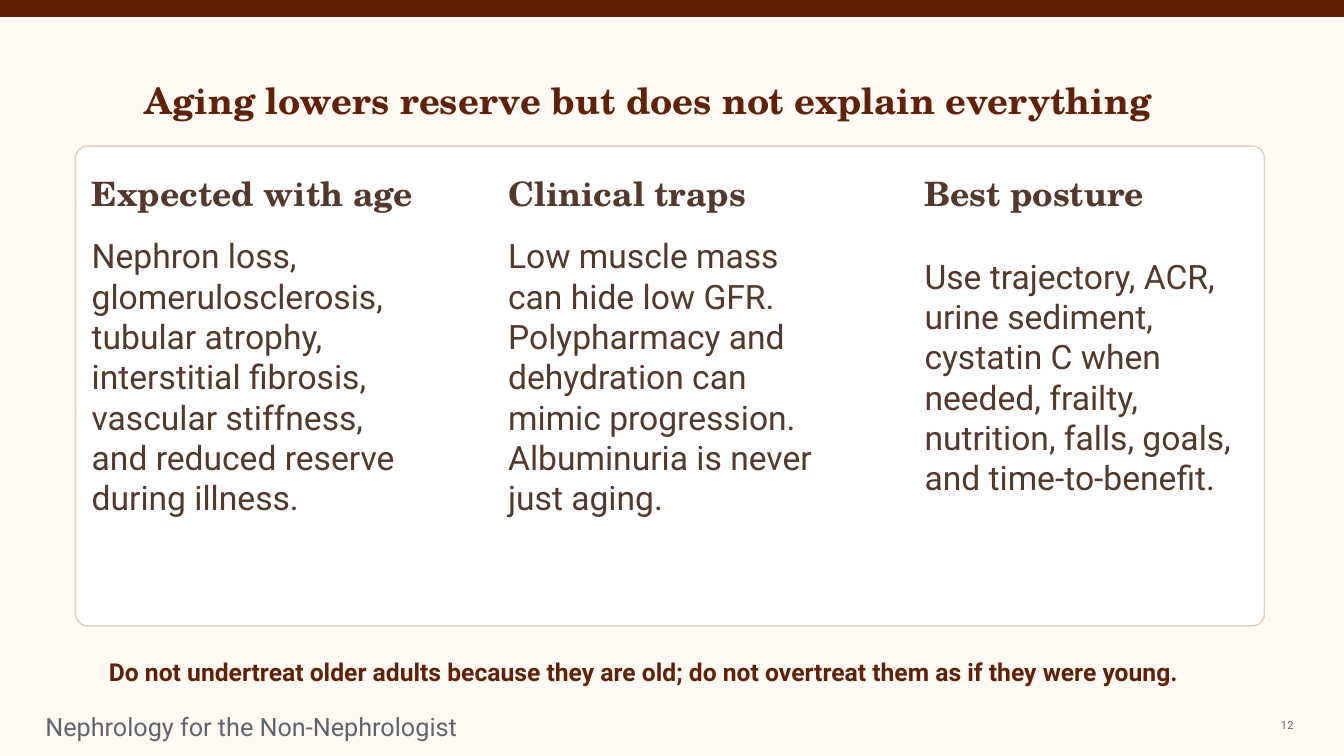
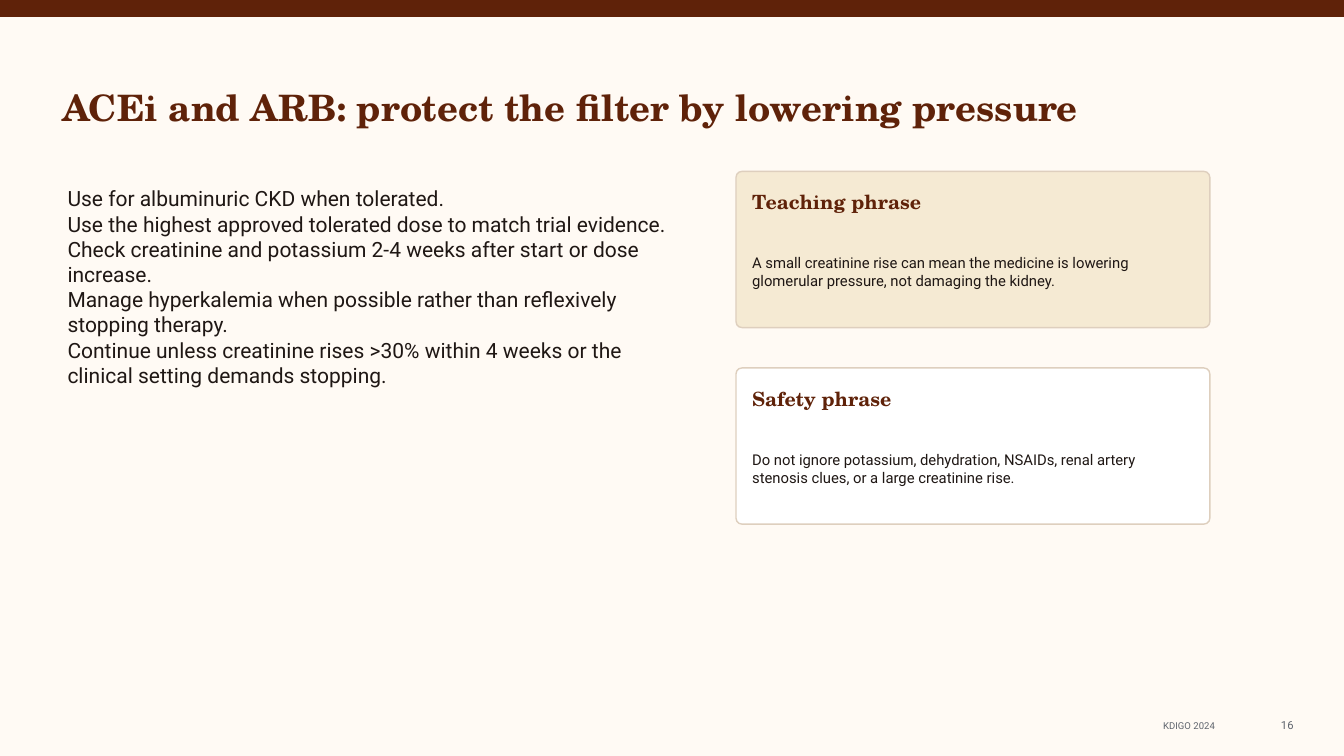
from typing import NamedTuple

from pptx import Presentation
from pptx import util as u
from pptx.dml.color import RGBColor
from pptx.enum import shapes, text

# Scale: 100 px to the inch
PX = 9144
SLIDE_W, SLIDE_H = 1333, 750

# Palette and fonts
CREAM = RGBColor(0xFF, 0xFA, 0xF4)
RUST = RGBColor(0x5F, 0x22, 0x09)
BROWN = RGBColor(0x53, 0x38, 0x2C)
INK = RGBColor(0x1F, 0x17, 0x14)
GRAY = RGBColor(0x5F, 0x64, 0x6D)
SAND = RGBColor(0xF5, 0xEA, 0xD3)
BORDER = RGBColor(0xDE, 0xCF, 0xBE)
WHITE = RGBColor(0xFF, 0xFF, 0xFF)
SERIF, SANS = "TeX Gyre Schola", "Roboto"


class Box(NamedTuple):
    x: int
    y: int
    w: int
    h: int


class Style(NamedTuple):
    size: float
    color: RGBColor
    font: str = SANS
    bold: bool = False
    align: text.PP_ALIGN = text.PP_ALIGN.LEFT
    anchor: text.MSO_ANCHOR = text.MSO_ANCHOR.MIDDLE


class Section(NamedTuple):
    heading: str
    body: str
    fill: RGBColor = WHITE


# Text styles
TITLE = Style(26, RUST, SERIF, True)
FOOTER = Style(18, GRAY)
PAGE_NUMBER = Style(8, GRAY, align=text.PP_ALIGN.RIGHT)
SOURCE = Style(6.8, GRAY, align=text.PP_ALIGN.RIGHT)
COLUMN_HEADING = Style(24, BROWN, SERIF, True)
COLUMN_BODY = Style(24, BROWN)
TAKEAWAY = Style(17.6, RUST, bold=True, anchor=text.MSO_ANCHOR.TOP)
POINTS_STYLE = Style(15, INK)
CARD_HEADING = Style(14, RUST, SERIF, True)
CARD_BODY = Style(10.6, INK)

# Content
COLUMNS = [
    Section("Expected with age",
            "Nephron loss, glomerulosclerosis, tubular atrophy, interstitial fibrosis, "
            "vascular stiffness, and reduced reserve during illness."),
    Section("Clinical traps",
            "Low muscle mass can hide low GFR. Polypharmacy and dehydration can mimic "
            "progression. Albuminuria is never just aging."),
    Section("Best posture",
            "Use trajectory, ACR, urine sediment, cystatin C when needed, frailty, "
            "nutrition, falls, goals, and time-to-benefit."),
]
POINTS = [
    "Use for albuminuric CKD when tolerated.",
    "Use the highest approved tolerated dose to match trial evidence.",
    "Check creatinine and potassium 2-4 weeks after start or dose increase.",
    "Manage hyperkalemia when possible rather than reflexively stopping therapy.",
    "Continue unless creatinine rises >30% within 4 weeks or the clinical setting "
    "demands stopping.",
]
CARDS = [
    Section("Teaching phrase",
            "A small creatinine rise can mean the medicine is lowering glomerular "
            "pressure, not damaging the kidney.", SAND),
    Section("Safety phrase",
            "Do not ignore potassium, dehydration, NSAIDs, renal artery stenosis clues, "
            "or a large creatinine rise."),
]


# Drawing helpers
def emu(box: Box) -> list[int]:
    return [v * PX for v in box]


def add_text(s, box: Box, style: Style, *lines: str) -> None:
    tf = s.shapes.add_textbox(*emu(box)).text_frame
    tf.word_wrap = True
    tf.vertical_anchor = style.anchor
    tf.margin_left = tf.margin_right = tf.margin_top = tf.margin_bottom = 0
    tf.text = "\n".join(lines)
    for p in tf.paragraphs:
        p.alignment = style.align
        p.font.name, p.font.size, p.font.bold = style.font, u.Pt(style.size), style.bold
        p.font.color.rgb = style.color


def add_panel(s, box: Box, fill: RGBColor, line: RGBColor, radius: int = 0) -> None:
    kind = shapes.MSO_SHAPE.ROUNDED_RECTANGLE if radius else shapes.MSO_SHAPE.RECTANGLE
    sp = s.shapes.add_shape(kind, *emu(box))
    sp.shadow.inherit = False
    sp.fill.solid()
    sp.fill.fore_color.rgb = fill
    sp.line.color.rgb = line
    sp.line.width = u.Pt(1)
    if radius:
        sp.adjustments[0] = radius / min(box.w, box.h)


def add_base(prs, title: str, title_x: int, title_y: int, number: int):
    """Blank slide with the shared background, band, title and page number."""
    s = prs.slides.add_slide(prs.slide_layouts[6])
    s.background.fill.solid()
    s.background.fill.fore_color.rgb = CREAM
    add_panel(s, Box(0, 0, SLIDE_W, 16), RUST, RUST)
    add_text(s, Box(title_x, title_y, 1140, 62), TITLE, title)
    add_text(s, Box(1228, 710, 55, 18), PAGE_NUMBER, str(number))
    return s


# Slides
def add_aging_slide(prs) -> None:
    s = add_base(prs, "Aging lowers reserve but does not explain everything", 143, 68, 12)
    add_text(s, Box(45, 712, 430, 18), FOOTER, "Nephrology for the Non-Nephrologist")
    add_panel(s, Box(75, 145, 1179, 476), WHITE, BORDER, radius=12)
    width, gap = 323, 90
    for i, column in enumerate(COLUMNS):
        x = 91 + i * (width + gap)
        add_text(s, Box(x, 159, width, 66), COLUMN_HEADING, column.heading)
        add_text(s, Box(x, 201, width, 345), COLUMN_BODY, column.body)
    add_text(s, Box(108, 652, 1130, 50), TAKEAWAY,
             "Do not undertreat older adults because they are old; "
             "do not overtreat them as if they were young.")


def add_medicine_slide(prs) -> None:
    s = add_base(prs, "ACEi and ARB: protect the filter by lowering pressure", 62, 75, 16)
    add_text(s, Box(520, 710, 685, 20), SOURCE, "KDIGO 2024")
    add_text(s, Box(67, 158, 600, 253), POINTS_STYLE, *POINTS)
    x, width, height, gap, pad = 730, 470, 155, 40, 16
    for i, card in enumerate(CARDS):
        y = 170 + i * (height + gap)
        add_panel(s, Box(x, y, width, height), card.fill, BORDER, radius=6)
        add_text(s, Box(x + pad, y + 14, width - 2 * pad, 32), CARD_HEADING, card.heading)
        add_text(s, Box(x + pad, y + 56, width - 2 * pad, 87), CARD_BODY, card.body)


def main() -> None:
    prs = Presentation()
    prs.slide_width, prs.slide_height = SLIDE_W * PX, SLIDE_H * PX
    add_aging_slide(prs)
    add_medicine_slide(prs)
    prs.save("out.pptx")


if __name__ == "__main__":
    main()
